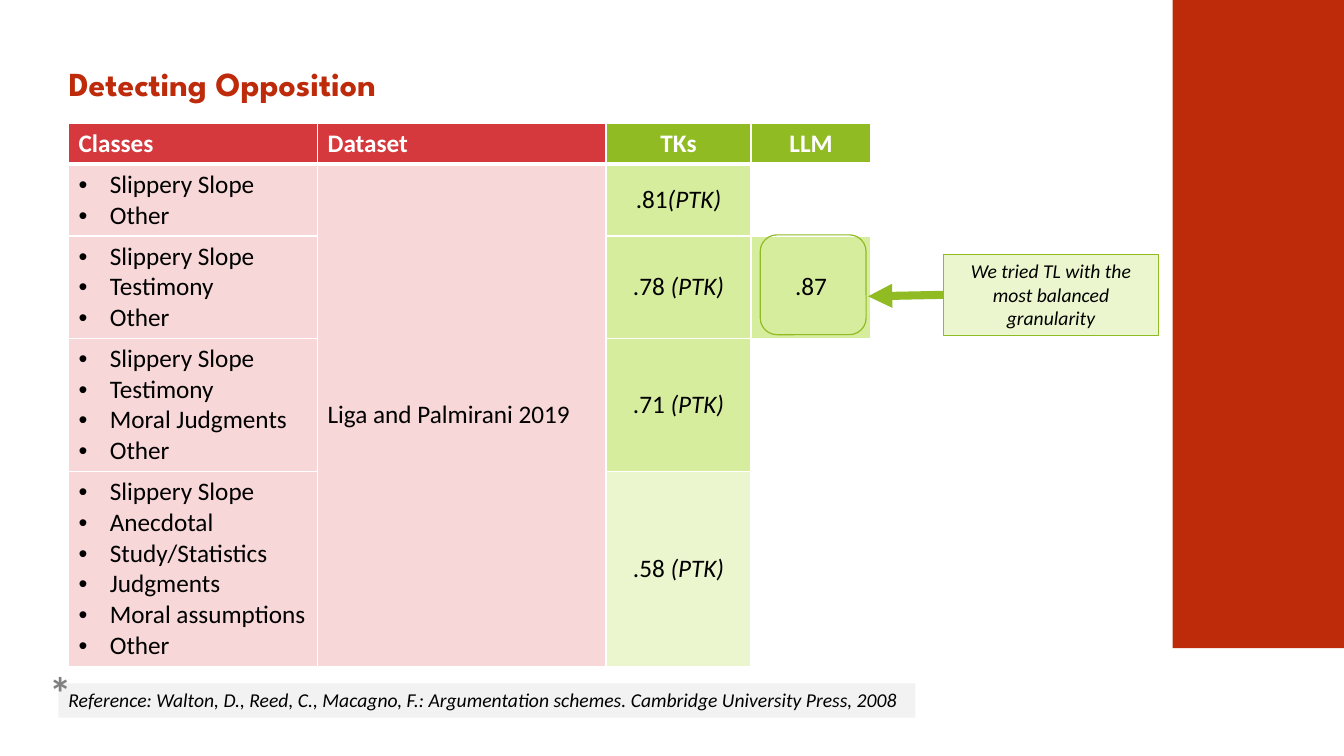
from dataclasses import dataclass

from lxml.etree import SubElement
from pptx import Presentation
from pptx.dml.color import RGBColor
from pptx.enum.shapes import MSO_CONNECTOR as CONN, MSO_SHAPE as SHAPE
from pptx.enum.text import MSO_ANCHOR as ANCHOR, MSO_AUTO_SIZE as AUTO, PP_ALIGN as ALIGN
from pptx.oxml.ns import qn
from pptx.util import Inches, Pt

COLORS = {
    "white": "FFFFFF", "black": "000000", "gray": "808080", "pale_gray": "F2F2F2",
    "brick": "BD2B0B", "red": "D5393D", "pink": "F7D7D8",
    "green": "90BB23", "lime": "D7ED9E", "pale_lime": "EBF6CE",
}
COLUMNS = [2.47, 2.86, 1.44, 1.19]
HEADERS = ["Classes", "Dataset", "TKs", "LLM"]
HEADER_FILLS = ["red", "red", "green", "green"]
BODY = {"name": "Calibri", "size": Pt(18), "bold": False}
HEAD = {**BODY, "bold": True}
SMALL = {"name": "Calibri", "size": Pt(14), "italic": True}
STAR = {"name": "Calibri", "size": Pt(32), "bold": True}
TITLE = {"name": "League Spartan", "size": Pt(24), "bold": True}


@dataclass
class Result:
    """One granularity of classes with its scores."""
    classes: list[str]
    tk: str
    tk_fill: str = "lime"
    llm: str = ""


@dataclass
class Box:
    """A rectangle-like shape with optional fill, line and text."""
    at: tuple[float, float, float, float]
    fill: str = ""
    line: float = 0
    text: str = ""
    font: dict | None = None
    color: str = "black"
    align: ALIGN = ALIGN.LEFT
    wrap: bool = False
    kind: SHAPE = SHAPE.RECTANGLE


RESULTS = [
    Result(["Slippery Slope", "Other"], ".81"),
    Result(["Slippery Slope", "Testimony", "Other"], ".78 ", llm=".87"),
    Result(["Slippery Slope", "Testimony", "Moral Judgments", "Other"], ".71 "),
    Result(["Slippery Slope", "Anecdotal", "Study/Statistics", "Judgments",
            "Moral assumptions", "Other"], ".58 ", "pale_lime"),
]
REFERENCE = Box((0.58, 6.78, 8.5, 0.34), "pale_gray", font=SMALL,
                text="Reference: Walton, D., Reed, C., Macagno, F.: Argumentation schemes. "
                     "Cambridge University Press, 2008")
SIDEBAR = Box((11.63, 0, 1.71, 6.43), "brick")
NOTE = Box((9.36, 2.52, 2.13, 0.81), "pale_lime", 0.75, font=SMALL, align=ALIGN.CENTER,
           wrap=True, text="We tried TL with the most balanced granularity")
HIGHLIGHT = Box((7.54, 2.33, 1.05, 0.99), line=0.85, kind=SHAPE.ROUNDED_RECTANGLE)
ASTERISK = Box((0.39, 6.55, 0.43, 0.64), text="*", font=STAR, color="gray")


def rgb(name: str) -> RGBColor:
    """Look up a named colour."""
    return RGBColor.from_string(COLORS[name])


def add_run(p, text: str, fmt: dict, color: str) -> None:
    """Append a formatted run to a paragraph."""
    r = p.add_run()
    r.text = text
    for key, value in fmt.items():
        setattr(r.font, key, value)
    r.font.color.rgb = rgb(color)


def add_bullet(p) -> None:
    """Give a paragraph a hanging round bullet."""
    pPr = p._p.get_or_add_pPr()
    pPr.set("marL", str(Inches(0.31)))
    pPr.set("indent", str(Inches(-0.31)))
    SubElement(pPr, qn("a:buFont"), typeface="Arial")
    SubElement(pPr, qn("a:buChar"), char="•")


def add_box(s, box: Box):
    """Draw a box and return its shape."""
    at = [Inches(v) for v in box.at]
    if box.fill or box.line:
        sp = s.shapes.add_shape(box.kind, *at)
        sp.shadow.inherit = False
    else:
        sp = s.shapes.add_textbox(*at)
    if box.fill:
        sp.fill.solid()
        sp.fill.fore_color.rgb = rgb(box.fill)
    else:
        sp.fill.background()
    if box.line:
        sp.line.color.rgb = rgb("green")
        sp.line.width = Pt(box.line)
    else:
        sp.line.fill.background()
    if box.text:
        tf = sp.text_frame
        tf.word_wrap = box.wrap
        tf.auto_size = AUTO.SHAPE_TO_FIT_TEXT
        tf.vertical_anchor = ANCHOR.TOP
        tf.paragraphs[0].alignment = box.align
        add_run(tf.paragraphs[0], box.text, box.font, box.color)
    return sp


def style_cell(cell, fill: str, row: int) -> None:
    """Set the white borders, fill and anchor of a cell."""
    tcPr = cell._tc.get_or_add_tcPr()
    heavy = {0: "lnB", 1: "lnT"}.get(row)
    for side in ("lnL", "lnR", "lnT", "lnB"):
        ln = SubElement(tcPr, qn(f"a:{side}"), w=str(Pt(3 if side == heavy else 1)))
        SubElement(SubElement(ln, qn("a:solidFill")), qn("a:srgbClr"), val=COLORS["white"])
    if fill:
        cell.fill.solid()
        cell.fill.fore_color.rgb = rgb(fill)
    else:
        cell.fill.background()
    cell.vertical_anchor = ANCHOR.MIDDLE if row else ANCHOR.TOP


def add_results_table(s) -> None:
    """Draw the table of classes and scores."""
    heights = [0.41] + [0.1 + 0.3 * len(res.classes) for res in RESULTS]
    table = s.shapes.add_table(len(heights), len(COLUMNS), Inches(0.68), Inches(1.22),
                               Inches(sum(COLUMNS)), Inches(sum(heights))).table
    for col, width in zip(table.columns, COLUMNS):
        col.width = Inches(width)
    for row, height in zip(table.rows, heights):
        row.height = Inches(height)
    for c, (text, fill) in enumerate(zip(HEADERS, HEADER_FILLS)):
        cell = table.cell(0, c)
        style_cell(cell, fill, 0)
        p = cell.text_frame.paragraphs[0]
        p.alignment = ALIGN.CENTER if c > 1 else ALIGN.LEFT
        add_run(p, text, HEAD, "white")
    for i, res in enumerate(RESULTS, 1):
        fills = ["pink", "pink", res.tk_fill, "lime" if res.llm else ""]
        for c, fill in enumerate(fills):
            style_cell(table.cell(i, c), fill, i)
        tf = table.cell(i, 0).text_frame
        for n, name in enumerate(res.classes):
            p = tf.add_paragraph() if n else tf.paragraphs[0]
            add_bullet(p)
            add_run(p, name, BODY, "black")
        tk, llm = (table.cell(i, c).text_frame.paragraphs[0] for c in (2, 3))
        tk.alignment = llm.alignment = ALIGN.CENTER
        add_run(tk, res.tk, BODY, "black")
        add_run(tk, "(PTK)", {**BODY, "italic": True}, "black")
        if res.llm:
            add_run(llm, res.llm, BODY, "black")
    dataset = table.cell(1, 1)
    dataset.merge(table.cell(len(RESULTS), 1))
    add_run(dataset.text_frame.paragraphs[0], "Liga and Palmirani 2019", BODY, "black")


def add_arrow(s, note) -> None:
    """Point from the note to the highlighted score."""
    arrow = s.shapes.add_connector(CONN.STRAIGHT, Inches(9.36), Inches(2.92),
                                   Inches(8.61), Inches(2.94))
    arrow.begin_connect(note, 1)
    arrow.line.color.rgb = rgb("green")
    arrow.line.width = Pt(5.75)
    SubElement(arrow.line._get_or_add_ln(), qn("a:tailEnd"), type="triangle")
    SubElement(arrow._element.spPr, qn("a:effectLst"))


def add_title(s) -> None:
    """Place and format the slide title."""
    sp = s.shapes.title
    sp.left, sp.top, sp.width, sp.height = (Inches(v) for v in (0.58, 0.52, 10.19, 0.71))
    sp.text_frame.vertical_anchor = ANCHOR.MIDDLE
    p = sp.text_frame.paragraphs[0]
    p.alignment = ALIGN.LEFT
    p.line_spacing = Pt(22)
    add_run(p, "Detecting Opposition", TITLE, "brick")


def main() -> None:
    """Build and save the slide."""
    prs = Presentation()
    prs.slide_width, prs.slide_height = Inches(13.33), Inches(7.5)
    s = prs.slides.add_slide(prs.slide_layouts[5])
    add_title(s)
    add_results_table(s)
    for box in (REFERENCE, ASTERISK, SIDEBAR):
        add_box(s, box)
    add_arrow(s, add_box(s, NOTE))
    add_box(s, HIGHLIGHT)
    prs.save("out.pptx")


if __name__ == "__main__":
    main()
